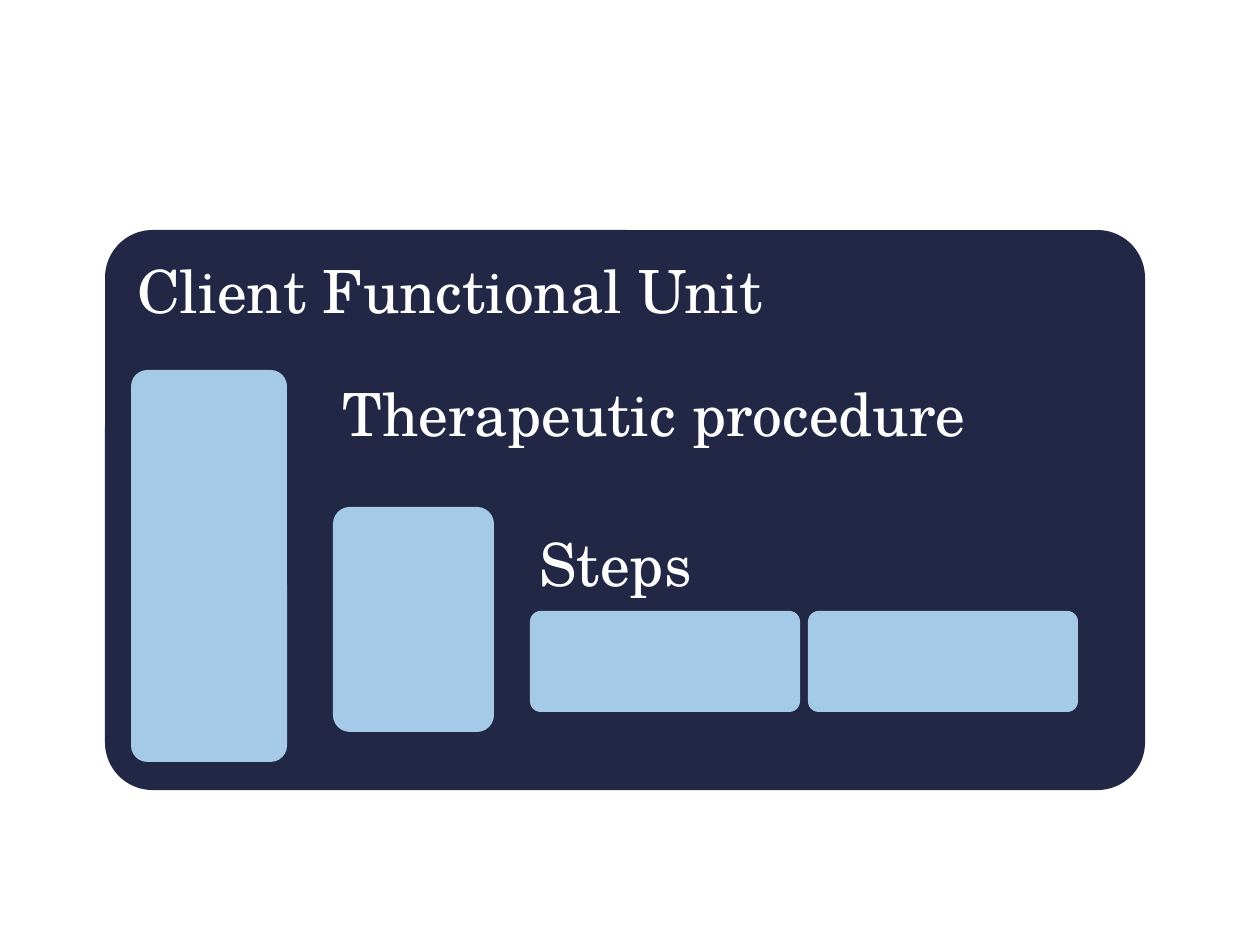
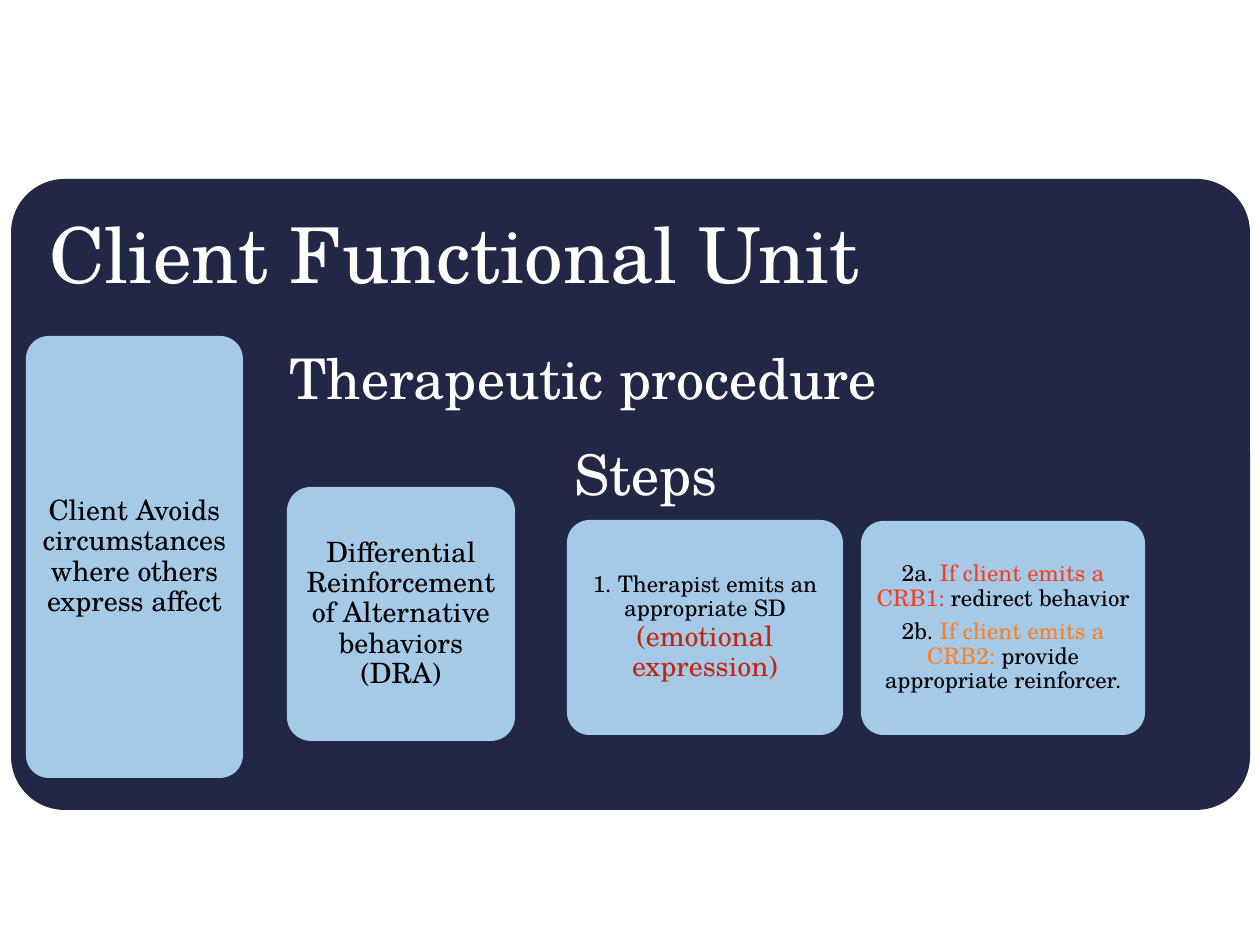
from lxml import etree
from pptx import Presentation
from pptx.dml.color import RGBColor
from pptx.enum.shapes import MSO_SHAPE
from pptx.enum.text import MSO_ANCHOR, MSO_AUTO_SIZE, PP_ALIGN
from pptx.oxml.ns import qn
from pptx.util import Emu, Pt

ROUNDED = MSO_SHAPE.ROUNDED_RECTANGLE
TOP, MIDDLE = MSO_ANCHOR.TOP, MSO_ANCHOR.MIDDLE
LEFT, CENTER = PP_ALIGN.LEFT, PP_ALIGN.CENTER
NO_AUTOFIT = MSO_AUTO_SIZE.NONE

EMU_PER_PX = 914400 / 126
FONT = "TeX Gyre Schola"
TITLE_ONLY = 5
OUTER_ROUNDING, INNER_ROUNDING = 0.085, 0.105
COLORS = {
    "panel": "212745",
    "card": "B4DCFA",
    "heading": "FFFFFF",
    "body": "000000",
    "emotion": "C3260C",
    "crb1": "F14124",
    "crb2": "FF8021",
}


def px(length):
    """Turn pixels into EMU."""
    return Emu(round(length * EMU_PER_PX))


def color(name):
    """Look up a named colour."""
    return RGBColor.from_string(COLORS[name])


def set_frame(box, inset, anchor):
    """Set equal insets, wrapping and vertical anchor of a text frame."""
    frame = box.text_frame
    frame.word_wrap = True
    frame.auto_size = NO_AUTOFIT
    frame.vertical_anchor = anchor
    frame.margin_left = frame.margin_right = px(inset)
    frame.margin_top = frame.margin_bottom = px(inset)


def format_paragraph(para, size, color_name, align):
    """Give a paragraph the shared typeface and line spacing."""
    para.alignment = align
    para.line_spacing = 0.9
    para.font.name = FONT
    para.font.size = Pt(size)
    para.font.color.rgb = color(color_name)


def add_rounded(page, bounds, fill, rounding):
    """Add a borderless rounded rectangle."""
    box = page.shapes.add_shape(ROUNDED, *map(px, bounds))
    box.adjustments[0] = rounding
    box.shadow.inherit = False
    box.fill.solid()
    box.fill.fore_color.rgb = color(fill)
    box.line.fill.background()
    return box


def add_outer_panel(page, bounds, text, size, inset):
    """Add the outer panel with the slide title in its upper left corner."""
    add_rounded(page, bounds, "panel", OUTER_ROUNDING)
    left, top, width, _ = bounds
    title = page.shapes.title
    title.left, title.top = px(left + inset), px(top + inset)
    title.width, title.height = px(width - 2 * inset), px(100)
    title.element.getparent().append(title.element)
    title.text_frame.text = text
    set_frame(title, 0, TOP)
    format_paragraph(title.text_frame.paragraphs[0], size, "heading", LEFT)


def add_inner_panel(page, bounds, text, size, inset):
    """Add a nested panel with its heading."""
    panel = add_rounded(page, bounds, "panel", INNER_ROUNDING)
    panel.text_frame.text = text
    set_frame(panel, inset, TOP)
    format_paragraph(panel.text_frame.paragraphs[0], size, "heading", LEFT)


def add_card(page, bounds, paragraphs=(), size=16, inset=9):
    """Add a translucent card; spans are (text, colour, size) with None to inherit."""
    card = add_rounded(page, bounds, "card", INNER_ROUNDING)
    fill = card.fill.fore_color._xFill.find(qn("a:srgbClr"))
    etree.SubElement(fill, qn("a:alpha"), val="90000")
    set_frame(card, inset, MIDDLE)
    for index, spans in enumerate(paragraphs):
        frame = card.text_frame
        para = frame.add_paragraph() if index else frame.paragraphs[0]
        format_paragraph(para, size, "body", CENTER)
        if index:
            para.space_before = Pt(5)
        for text, color_name, span_size in spans:
            span = para.add_run()
            span.text = text
            if color_name:
                span.font.color.rgb = color(color_name)
            if span_size:
                span.font.size = Pt(span_size)


def build_empty_model(deck):
    """Build the model with blank cards."""
    page = deck.slides.add_slide(deck.slide_layouts[TITLE_ONLY])
    add_outer_panel(page, (105, 230, 1040, 560), "Client Functional Unit", 34, 32)
    add_card(page, (131, 370, 156, 392))
    add_inner_panel(page, (312, 354, 805, 422), "Therapeutic procedure", 34, 18)
    add_card(page, (333, 507, 161, 225))
    add_inner_panel(page, (515, 510, 577, 224), "Steps", 34, 18)
    for step in range(2):
        add_card(page, (530 + 278 * step, 611, 270, 101))


def build_filled_model(deck):
    """Build the model with an example in its cards."""
    page = deck.slides.add_slide(deck.slide_layouts[TITLE_ONLY])
    add_outer_panel(page, (11, 179, 1239, 631), "Client Functional Unit", 44, 38)
    add_card(page, (26, 336, 217, 442), [
        [("Client Avoids circumstances where others express affect", None, None)],
    ])
    add_inner_panel(page, (258, 319, 960, 476), "Therapeutic procedure", 32, 17)
    add_card(page, (287, 487, 228, 254), [
        [("Differential Reinforcement of Alternative behaviors (DRA)", None, None)],
    ])
    add_inner_panel(page, (547, 420, 626, 335), "Steps", 32, 17)
    add_card(page, (567, 520, 276, 215), [
        [("1. Therapist emits an appropriate SD ", None, None),
         ("(emotional expression)", "emotion", 16)],
    ], size=13, inset=6)
    add_card(page, (861, 521, 284, 214), [
        [("2a. ", None, None),
         ("If client emits a CRB1: ", "crb1", None),
         ("redirect behavior", None, None)],
        [("2b. ", None, None),
         ("If client emits a CRB2: ", "crb2", None),
         ("provide appropriate reinforcer.", None, None)],
    ], size=13, inset=6)


def main():
    """Build and save the deck."""
    deck = Presentation()
    deck.slide_width, deck.slide_height = px(1260), px(945)
    build_empty_model(deck)
    build_filled_model(deck)
    deck.save("out.pptx")


if __name__ == "__main__":
    main()
